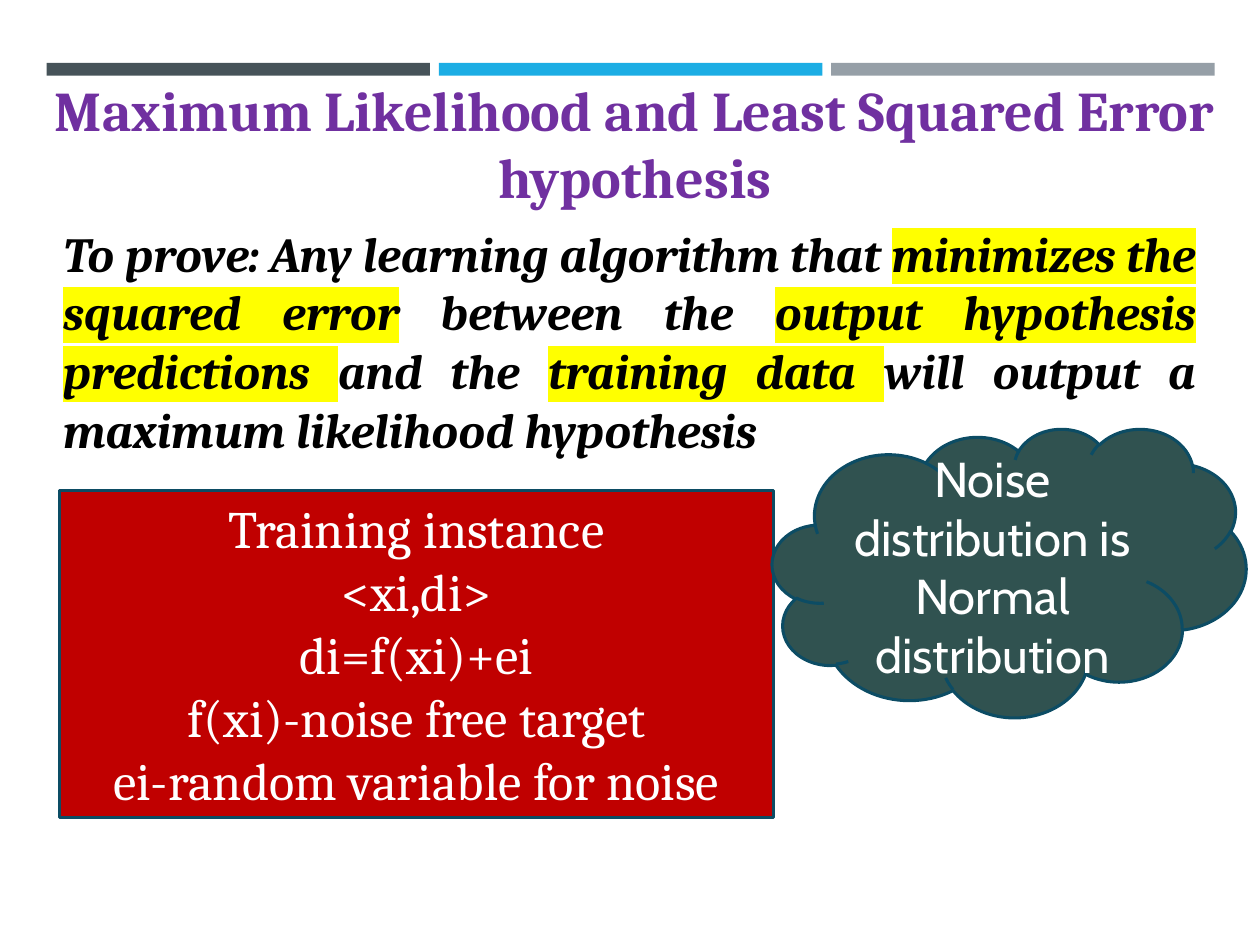
from lxml import etree
from pptx import Presentation
from pptx.dml.color import RGBColor
from pptx.enum.shapes import MSO_SHAPE as SHAPE
from pptx.enum.text import MSO_ANCHOR as ANCHOR, MSO_AUTO_SIZE as AUTO, PP_ALIGN as ALIGN
from pptx.oxml.ns import qn
from pptx.util import Inches, Pt

SLATE = RGBColor(0x46, 0x53, 0x59)
SKY = RGBColor(0x1C, 0xAD, 0xE4)
GREY = RGBColor(0x96, 0x9F, 0xA7)
PURPLE = RGBColor(0x70, 0x30, 0xA0)
BLACK = RGBColor(0, 0, 0)
WHITE = RGBColor(0xFF, 0xFF, 0xFF)
RED = RGBColor(0xC0, 0, 0)
GREEN = RGBColor(0x30, 0x52, 0x50)
OUTLINE = RGBColor(0x0C, 0x4C, 0x64)
YELLOW = RGBColor(0xFF, 0xFF, 0)

CLAIM = [  # text, highlighted
    ("To prove: Any learning algorithm that ", False),
    ("minimizes the squared error", True),
    (" between the ", False),
    ("output hypothesis predictions ", True),
    ("and the ", False),
    ("training data ", True),
    ("will output a maximum likelihood hypothesis ", False),
]
TRAINING = ["Training instance", "<xi,di>", "di=f(xi)+ei",
            "f(xi)-noise free target", "ei-random variable for noise"]


def place(part, box):
    part.left, part.top, part.width, part.height = map(Inches, box)


def prepare_frame(frame, anchor):
    frame.word_wrap = True
    frame.auto_size = AUTO.NONE
    frame.vertical_anchor = anchor


def add_run(paragraph, text, size, font, color, bold=False, italic=False):
    run = paragraph.add_run()
    run.text = text
    run.font.size = Pt(size)
    run.font.name = font
    run.font.bold = bold
    run.font.italic = italic
    run.font.color.rgb = color
    return run


def highlight(run, color):
    mark = etree.Element(qn("a:highlight"))
    etree.SubElement(mark, qn("a:srgbClr"), val=str(color))
    run.font._element.find(qn("a:solidFill")).addnext(mark)


def add_filled(slide, kind, box, fill):
    shape = slide.shapes.add_shape(kind, *map(Inches, box))
    shape.shadow.inherit = False
    shape.fill.solid()
    shape.fill.fore_color.rgb = fill
    shape.line.fill.background()
    return shape


def add_top_bars(slide, box):
    left, top, width, height = box
    gap = 0.07
    bar_width = (width - 2 * gap) / 3
    for i, color in enumerate((SLATE, SKY, GREY)):
        bar = (left + i * (bar_width + gap), top, bar_width, height)
        add_filled(slide, SHAPE.RECTANGLE, bar, color)


def fill_title(slide, box):
    title = slide.shapes.title
    place(title, box)
    prepare_frame(title.text_frame, ANCHOR.TOP)
    heading = title.text_frame.paragraphs[0]
    heading.alignment = ALIGN.CENTER
    add_run(heading, "Maximum Likelihood and Least Squared Error hypothesis",
            32, "Cambria", PURPLE, bold=True)


def fill_claim(slide, box):
    body = slide.placeholders[1]
    place(body, box)
    prepare_frame(body.text_frame, ANCHOR.TOP)
    claim = body.text_frame.paragraphs[0]
    claim.alignment = ALIGN.JUSTIFY
    claim.space_before = Pt(0)
    # No bullet and no hanging indent
    properties = claim._p.get_or_add_pPr()
    properties.set("marL", "0")
    properties.set("indent", "0")
    etree.SubElement(properties, qn("a:buNone"))
    for text, marked in CLAIM:
        run = add_run(claim, text, 28, "Cambria", BLACK, bold=True, italic=True)
        if marked:
            highlight(run, YELLOW)


def add_callout(slide, kind, box, fill, lines, size, font):
    callout = add_filled(slide, kind, box, fill)
    callout.line.color.rgb = OUTLINE
    callout.line.width = Pt(1.75)
    frame = callout.text_frame
    prepare_frame(frame, ANCHOR.MIDDLE)
    for i, text in enumerate(lines):
        paragraph = frame.add_paragraph() if i else frame.paragraphs[0]
        paragraph.alignment = ALIGN.CENTER
        add_run(paragraph, text, size, font, WHITE)


def main():
    prs = Presentation()
    prs.slide_width, prs.slide_height = Inches(10), Inches(7.5)
    slide = prs.slides.add_slide(prs.slide_layouts[1])

    add_top_bars(slide, (0.37, 0.5, 9.27, 0.1))
    fill_title(slide, (0.32, 0.55, 9.44, 1.18))
    fill_claim(slide, (0.4, 1.72, 9.19, 1.99))
    # Training data and noise assumption
    add_callout(slide, SHAPE.RECTANGLE, (0.47, 3.89, 5.67, 2.6), RED,
                TRAINING, 30, "Cambria")
    add_callout(slide, SHAPE.CLOUD, (6.13, 3.4, 3.76, 2.29), GREEN,
                ["Noise distribution is Normal distribution"], 28, "Cabin")

    prs.save("out.pptx")


if __name__ == "__main__":
    main()
